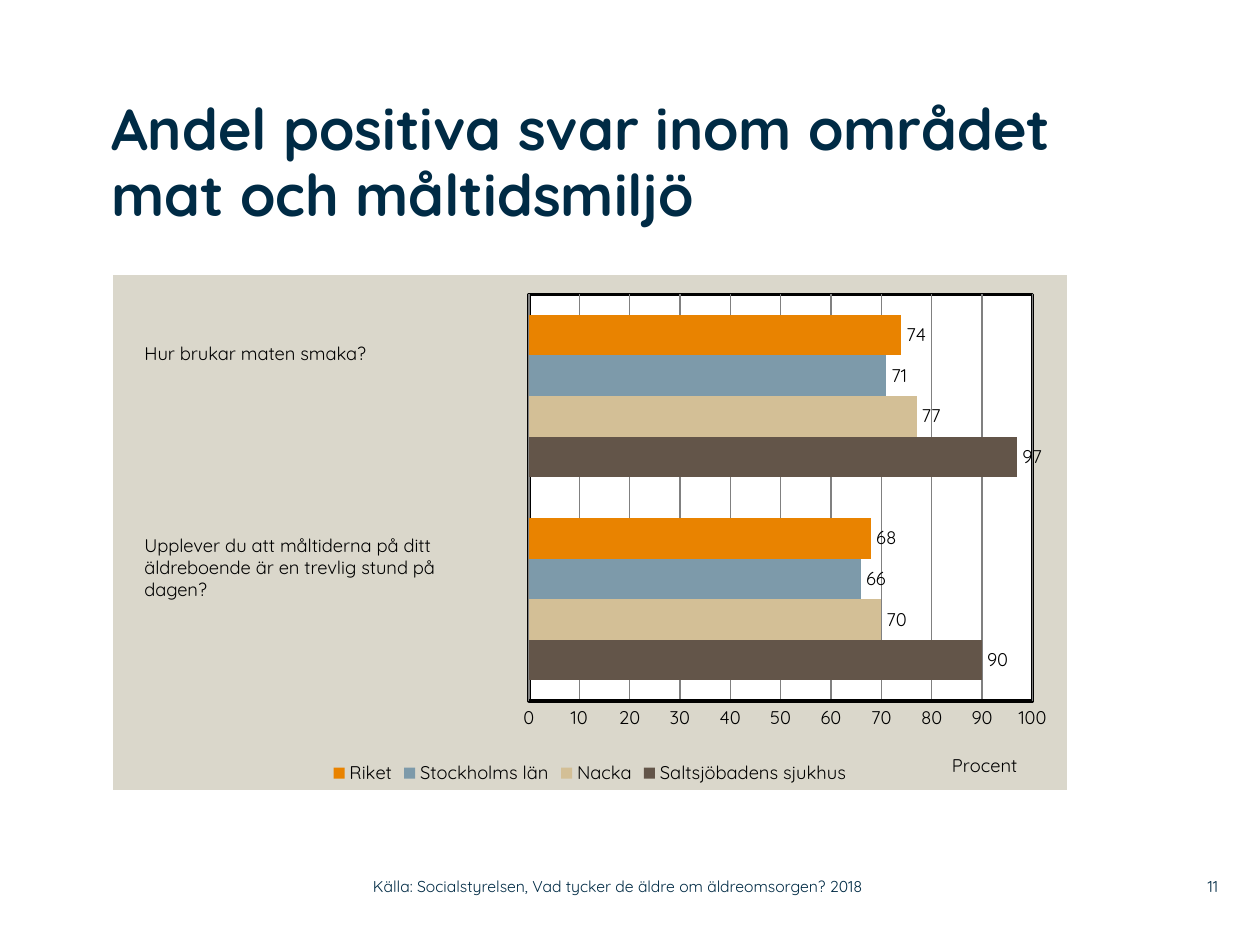
from dataclasses import dataclass

from lxml.etree import SubElement
from pptx import Presentation
from pptx.chart.data import CategoryChartData
from pptx.dml.color import RGBColor
from pptx.enum.chart import XL_CHART_TYPE as ChartType
from pptx.enum.chart import XL_LABEL_POSITION as LabelPos
from pptx.enum.chart import XL_LEGEND_POSITION as LegendPos
from pptx.enum.chart import XL_TICK_MARK as Tick
from pptx.enum.text import MSO_ANCHOR as Anchor
from pptx.enum.text import PP_ALIGN as Align
from pptx.oxml import parse_xml
from pptx.oxml.ns import nsdecls, qn
from pptx.util import Emu, Pt

SCALE = 914400 / 126


def px(n):
    return Emu(round(n * SCALE))


@dataclass(frozen=True)
class Theme:
    font: str = "Quicksand"
    navy: str = "002B45"
    black: str = "000000"
    white: str = "FFFFFF"
    panel: str = "DAD7CB"
    grid: str = "808080"
    title: float = 33
    label: float = 10.5
    footer: float = 9


def sp_pr(fill, line=None, width=0):
    """Return chart shape properties with a solid fill and an optional outline."""
    solid = '<a:solidFill><a:srgbClr val="{}"/></a:solidFill>'
    outline = solid.format(line) if line else "<a:noFill/>"
    return parse_xml(
        f'<c:spPr {nsdecls("c", "a")}>{solid.format(fill)}'
        f'<a:ln w="{Pt(width)}">{outline}</a:ln></c:spPr>')


def place(parent, index, **values):
    """Give a chart part a manual layout, as shares of the chart area."""
    for old in parent.findall(qn("c:layout")):
        parent.remove(old)
    layout = parse_xml(f'<c:layout {nsdecls("c")}><c:manualLayout/></c:layout>')
    for tag, val in values.items():
        SubElement(layout[0], qn(f"c:{tag}")).set("val", str(val))
    parent.insert(index, layout)


class Deck:
    def __init__(self, theme):
        self.theme = theme
        self.prs = Presentation()
        self.prs.slide_width, self.prs.slide_height = px(1260), px(945)
        self.s = self.prs.slides.add_slide(self.prs.slide_layouts[5])

    def style(self, font, size, color, bold=False):
        font.name, font.size, font.bold = self.theme.font, Pt(size), bold
        font.color.rgb = RGBColor.from_string(color)

    def fill_text(self, tf, text, size, color, bold=False, align=Align.LEFT):
        tf.word_wrap = True
        tf.text = text
        for p in tf.paragraphs:
            p.alignment = align
            for r in p.runs:
                self.style(r.font, size, color, bold)

    def title(self, text, box):
        sp = self.s.shapes.title
        sp.left, sp.top, sp.width, sp.height = map(px, box)
        tf = sp.text_frame
        tf.margin_left = tf.margin_right = tf.margin_bottom = 0
        tf.margin_top = px(3)
        tf.vertical_anchor = Anchor.TOP
        self.fill_text(tf, text, self.theme.title, self.theme.navy, bold=True)
        tf.paragraphs[0].line_spacing = 0.95

    def question(self, text, box):
        tf = self.s.shapes.add_textbox(*map(px, box)).text_frame
        self.fill_text(tf, text, self.theme.label, self.theme.black)

    def footer(self, text, box, align=Align.LEFT):
        tf = self.s.shapes.add_textbox(*map(px, box)).text_frame
        tf.margin_left = tf.margin_right = tf.margin_top = tf.margin_bottom = 0
        tf.vertical_anchor = Anchor.MIDDLE
        self.fill_text(tf, text, self.theme.footer, self.theme.navy, align=align)

    def bar_chart(self, categories, series, axis_title, box):
        t = self.theme
        data = CategoryChartData()
        data.categories = categories
        for name, values, _ in series:
            data.add_series(name, values)
        chart = self.s.shapes.add_chart(
            ChartType.BAR_CLUSTERED, *map(px, box), data).chart
        self.style(chart.font, t.label, t.black)
        chart.has_title = False
        chart.has_legend = True
        chart.legend.position = LegendPos.BOTTOM
        chart.legend.include_in_layout = False
        self.style(chart.legend.font, t.label, t.black)

        plot = chart.plots[0]
        plot.gap_width = 100
        plot.vary_by_categories = False
        for ser, (_, _, color) in zip(plot.series, series):
            ser.format.fill.solid()
            ser.format.fill.fore_color.rgb = RGBColor.from_string(color)
            labels = ser.data_labels
            labels.show_value = True
            labels.position = LabelPos.OUTSIDE_END
            self.style(labels.font, t.label, t.black)

        chart.category_axis.visible = False
        self.value_axis(chart.value_axis, axis_title)

        area = chart.element.chart
        area.addnext(sp_pr(t.panel))
        plot_area = area.plotArea
        place(plot_area, 0, layoutTarget="inner", xMode="edge", yMode="edge",
              x=0.436, y=0.038, w=0.528, h=0.789)
        plot_area.append(sp_pr(t.white, t.black, 2))

    def value_axis(self, axis, title):
        t = self.theme
        axis.minimum_scale, axis.maximum_scale, axis.major_unit = 0, 100, 10
        axis.major_tick_mark = axis.minor_tick_mark = Tick.NONE
        axis.has_major_gridlines = True
        for line, color, width in (
                (axis.major_gridlines.format.line, t.grid, 0.75),
                (axis.format.line, t.black, 2)):
            line.color.rgb = RGBColor.from_string(color)
            line.width = Pt(width)
        self.style(axis.tick_labels.font, t.label, t.black)
        axis.has_title = True
        tf = axis.axis_title.text_frame
        tf.text = title
        self.style(tf.paragraphs[0].runs[0].font, t.label, t.black)
        place(axis.axis_title.element, 1, xMode="edge", yMode="edge",
              x=0.876, y=0.92)


def main():
    deck = Deck(Theme())
    deck.bar_chart(
        ["1", "2"],
        [("Saltsjöbadens sjukhus", (90, 97), "635549"),
         ("Nacka", (70, 77), "D3BF96"),
         ("Stockholms län", (66, 71), "7D9AAA"),
         ("Riket", (68, 74), "E98300")],
        "Procent", (113, 275, 954, 515))
    deck.title("Andel positiva svar inom området mat och måltidsmiljö",
               (111, 95, 1061, 179))
    deck.question("Hur brukar maten smaka?", (132, 336, 374, 35))
    deck.question("Upplever du att måltiderna på ditt äldreboende är en "
                  "trevlig stund på\ndagen?", (132, 528, 369, 79))
    deck.footer("11", (1159, 868, 59, 37), Align.RIGHT)
    deck.footer("Källa: Socialstyrelsen, Vad tycker de äldre om "
                "äldreomsorgen? 2018", (373, 868, 558, 37))
    deck.prs.save("out.pptx")


if __name__ == "__main__":
    main()
